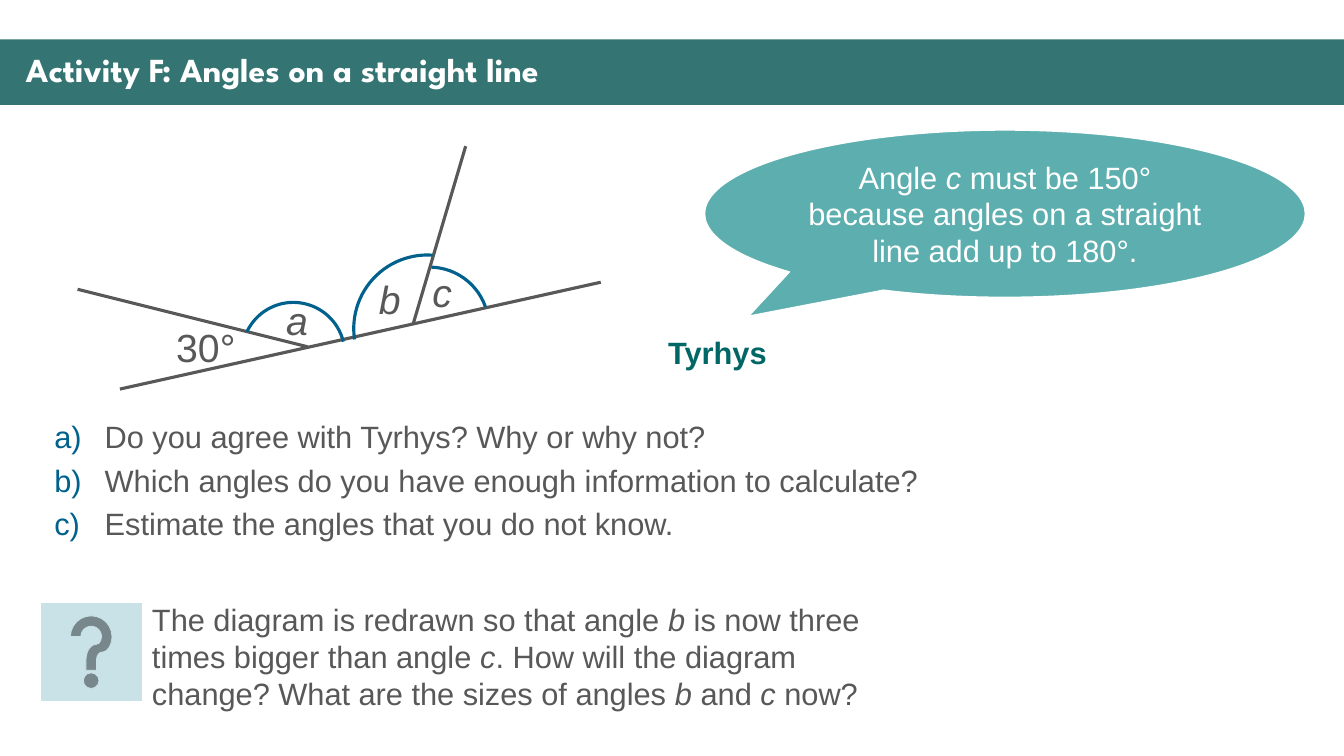
"""Build a maths activity slide about angles on a straight line."""
from lxml import etree
from pptx import Presentation, util as u
from pptx.dml.color import RGBColor
from pptx.enum import shapes, text
from pptx.oxml.ns import qn

COLUMN = ROW = u.Inches(0.1)
WIDTH, HEIGHT = 133.33, 75

TEAL = RGBColor(0x34, 0x75, 0x74)
LIGHT_TEAL = RGBColor(0x5D, 0xAE, 0xAE)
DARK_TEAL = RGBColor(0x00, 0x66, 0x66)
PALE_BLUE = RGBColor(0xC8, 0xE2, 0xE8)
BLUE = RGBColor(0x00, 0x62, 0x8C)
GREY = RGBColor(0x58, 0x58, 0x58)
WHITE = RGBColor(0xFF, 0xFF, 0xFF)

RAYS = [
    ((11.9, 38.6), (59.6, 28)),
    ((7.7, 28.7), (30.5, 34.4)),
    ((41, 32.1), (46.2, 14.5)),
]
ARCS = [
    ((24, 30, 10.2, 10.2), -12.2, (130.49, 215.1)),
    ((36.7, 26.5, 11.8, 11.8), -9.9, (169.17, 210.37)),
    ((35.1, 25.3, 14.6, 14.6), -9.9, (108.84, 170.42)),
]
ANGLE_LABELS = [
    ((16.5, 31.6, 8, 5.7), "30°", False),
    ((27.4, 28.9, 4.2, 5.7), "a", True),
    ((36.6, 26.8, 4.2, 5.7), "b", True),
    ((41.9, 26.1, 4, 5.7), "c", True),
]
QUESTIONS = [
    "Do you agree with Tyrhys? Why or why not?",
    "Which angles do you have enough information to calculate?",
    "Estimate the angles that you do not know.",
]
SPEECH = [
    ("Angle ", False),
    ("c", True),
    (" must be 150° because angles on a straight line add up to 180°.", False),
]
CHALLENGE = [
    ("The diagram is redrawn so that angle ", False),
    ("b", True),
    (" is now three times bigger than angle ", False),
    ("c", True),
    (". How will the diagram change? What are the sizes of angles ", False),
    ("b", True),
    (" and ", False),
    ("c", True),
    (" now?", False),
]


def place(left, top, width, height):
    """Turn grid columns and rows into slide lengths."""
    return (round(left * COLUMN), round(top * ROW),
            round(width * COLUMN), round(height * ROW))


def add_preset(page, kind, area, fill=None, line=None, weight=1):
    """Add a preset shape with the given fill and outline."""
    shape = page.shapes.add_shape(kind, *place(*area))
    shape.shadow.inherit = False
    if fill is None:
        shape.fill.background()
    else:
        shape.fill.solid()
        shape.fill.fore_color.rgb = fill
    if line is None:
        shape.line.fill.background()
    else:
        shape.line.color.rgb = line
        shape.line.width = u.Pt(weight)
    return shape


def add_ray(page, start, end):
    """Draw one straight line of the diagram."""
    ray = page.shapes.add_connector(
        shapes.MSO_CONNECTOR.STRAIGHT, *place(*start, *end))
    ray.line.color.rgb = GREY
    ray.line.width = u.Pt(2.25)
    etree.SubElement(ray._element.spPr, qn("a:effectLst"))


def add_arc(page, area, rotation, sweep):
    """Draw the arc that marks an angle."""
    arc = add_preset(page, shapes.MSO_SHAPE.ARC, area, line=BLUE, weight=2.25)
    arc.rotation = rotation
    arc.adjustments[0], arc.adjustments[1] = sweep


def write(para, spans, color=GREY, size=22, bold=False, font="Arial"):
    """Write (text, italic) spans into a paragraph."""
    para.space_before = u.Pt(size * 0.2)
    for words, italic in spans:
        span = para.add_run()
        span.text = words
        span.font.name = font
        span.font.size = u.Pt(size)
        span.font.bold = bold
        span.font.italic = italic
        span.font.color.rgb = color


def add_text(page, area, paragraphs, wrap=True, **style):
    """Add a text box and return its frame."""
    box = page.shapes.add_textbox(*place(*area))
    frame = box.text_frame
    frame.word_wrap = wrap
    for index, spans in enumerate(paragraphs):
        para = frame.add_paragraph() if index else frame.paragraphs[0]
        write(para, spans, **style)
    return frame


def letter(para):
    """Give a paragraph a hanging blue a), b), c) marker."""
    props = para._p.get_or_add_pPr()
    indent = u.Inches(0.5)
    props.set("marL", str(indent))
    props.set("indent", str(-indent))
    color = etree.SubElement(props, qn("a:buClr"))
    etree.SubElement(color, qn("a:srgbClr"), val=str(BLUE))
    etree.SubElement(props, qn("a:buFont"), typeface="+mj-lt")
    etree.SubElement(props, qn("a:buAutoNum"), type="alphaLcParenR")


def add_header(page):
    """Add the title band."""
    add_preset(page, shapes.MSO_SHAPE.RECTANGLE, (0, 3.9, WIDTH, 6.5), TEAL)
    title = add_text(
        page, (1.6, 4.8, 130.4, 4.7),
        [[("Activity F: Angles on a straight line", False)]],
        color=WHITE, size=24, bold=True, font="League Spartan")
    title.vertical_anchor = text.MSO_ANCHOR.MIDDLE
    title.paragraphs[0].line_spacing = 0.9


def add_diagram(page):
    """Draw the lines, angle labels and arcs."""
    for start, end in RAYS:
        add_ray(page, start, end)
    for area, label, italic in ANGLE_LABELS:
        add_text(page, area, [[(label, italic)]], wrap=False, size=28)
    for area, rotation, sweep in ARCS:
        add_arc(page, area, rotation, sweep)


def add_speech(page):
    """Add the speech bubble and its speaker's name."""
    bubble = add_preset(page, shapes.MSO_SHAPE.OVAL_CALLOUT,
                        (69.9, 12.9, 59.6, 16.6), LIGHT_TEAL, WHITE)
    bubble.adjustments[0], bubble.adjustments[1] = -0.427, 0.613
    frame = bubble.text_frame
    frame.word_wrap = True
    frame.vertical_anchor = text.MSO_ANCHOR.MIDDLE
    frame.paragraphs[0].alignment = text.PP_ALIGN.CENTER
    write(frame.paragraphs[0], SPEECH, WHITE)
    add_text(page, (65.3, 32.6, 11.9, 4.7), [[("Tyrhys", False)]],
             wrap=False, color=DARK_TEAL, bold=True)


def add_tasks(page):
    """Add the lettered questions and the challenge."""
    questions = add_text(page, (4.4, 41, 101.4, 18),
                         [[(question, False)] for question in QUESTIONS])
    for para in questions.paragraphs:
        letter(para)
    add_preset(page, shapes.MSO_SHAPE.ACTION_BUTTON_HELP,
               (4.1, 59.9, 9.9, 9.6), PALE_BLUE, PALE_BLUE, 0.5)
    add_text(page, (14.1, 59.1, 76.6, 12.1), [CHALLENGE])


def main():
    """Build and save the deck."""
    deck = Presentation()
    deck.slide_width, deck.slide_height = place(0, 0, WIDTH, HEIGHT)[2:]
    page = deck.slides.add_slide(deck.slide_layouts[6])
    add_header(page)
    add_diagram(page)
    add_speech(page)
    add_tasks(page)
    deck.save("out.pptx")


if __name__ == "__main__":
    main()
